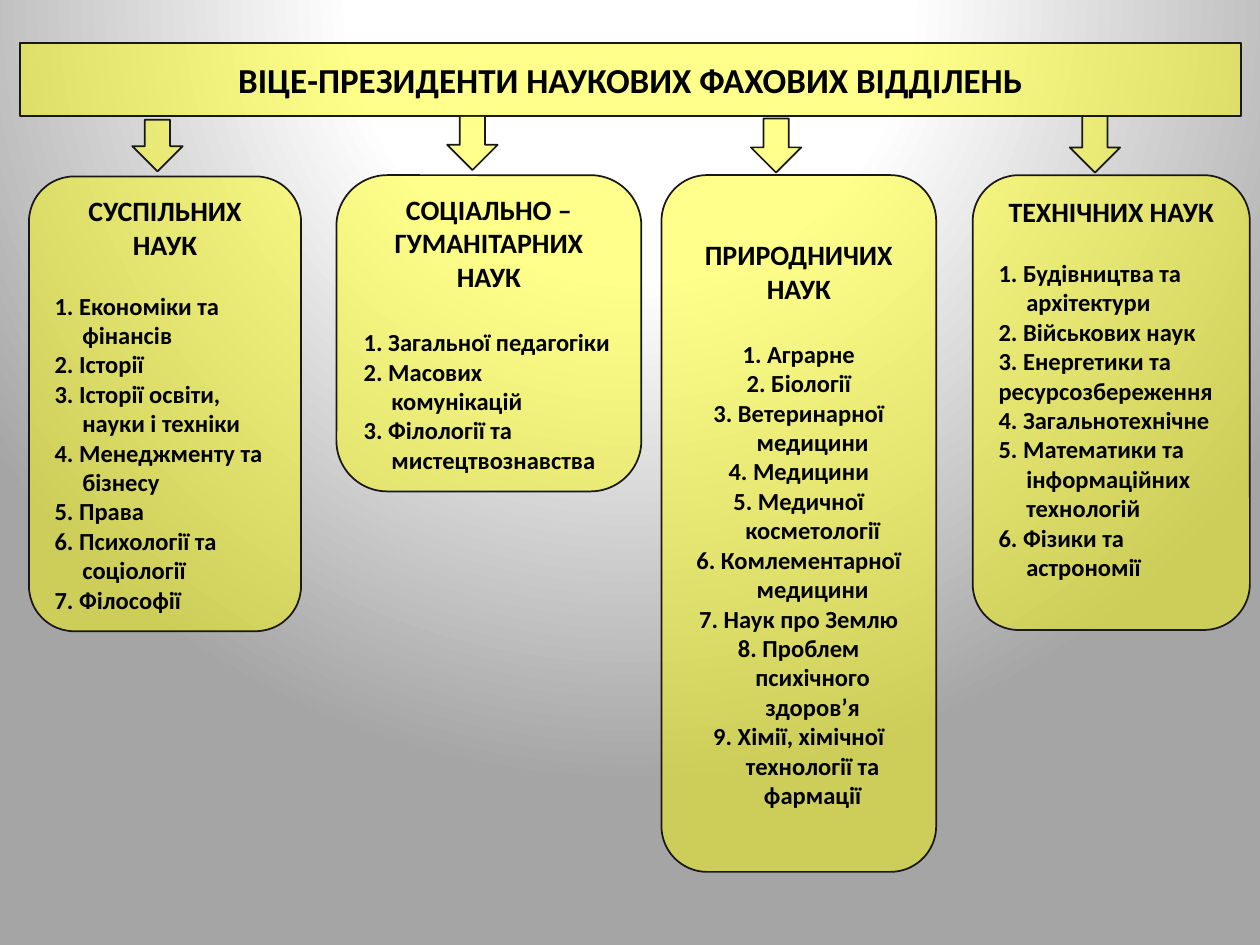
from pptx import Presentation
from pptx.dml.color import RGBColor
from pptx.enum import shapes as sh, text as tx
from pptx.oxml import parse_xml
from pptx.oxml.ns import nsdecls, qn
from pptx.util import Inches, Pt

YELLOW = RGBColor(0xFF, 0xFF, 0x00)
EDGE = RGBColor(0x18, 0x18, 0x18)
BLACK = RGBColor(0x00, 0x00, 0x00)
FONT = "Calibri"
ALPHA = 45000
HANG = 0.22
LEFT, CENTER = tx.PP_ALIGN.LEFT, tx.PP_ALIGN.CENTER

# Content: a "\v" breaks a line inside one item
TITLE = "ВІЦЕ-ПРЕЗИДЕНТИ НАУКОВИХ ФАХОВИХ ВІДДІЛЕНЬ"
COLUMNS = [
    dict(head="СУСПІЛЬНИХ НАУК", box=(0.23, 1.4, 2.16, 3.61),
         arrow=(1.05, 0.95, 0.4, 0.41), align=LEFT, gap=17, foot=0.05,
         items=["Економіки та\vфінансів", "Історії",
                "Історії освіти,\vнауки і техніки",
                "Менеджменту та\vбізнесу", "Права",
                "Психології та\vсоціології", "Філософії"]),
    dict(head="СОЦІАЛЬНО – ГУМАНІТАРНИХ НАУК", box=(2.67, 1.39, 2.42, 2.51),
         arrow=(3.55, 0.92, 0.4, 0.43), align=LEFT, gap=19.5, foot=0.05,
         items=["Загальної педагогіки", "Масових\vкомунікацій",
                "Філології та\vмистецтвознавства"]),
    dict(head="ПРИРОДНИЧИХ НАУК", box=(5.25, 1.39, 2.18, 5.53),
         arrow=(5.96, 0.94, 0.4, 0.43), align=CENTER, gap=19.5, foot=0.05,
         items=["Аграрне", "Біології", "Ветеринарної\vмедицини", "Медицини",
                "Медичної\vкосметології", "Комлементарної\vмедицини",
                "Наук про Землю", "Проблем\vпсихічного\vздоров’я",
                "Хімії, хімічної\vтехнології та\vфармації"]),
    dict(head="ТЕХНІЧНИХ НАУК", box=(7.72, 1.39, 2.2, 3.61),
         arrow=(8.49, 0.92, 0.4, 0.45), align=LEFT, gap=17, foot=0.28,
         flush=3,  # this item wraps without a hanging indent
         items=["Будівництва та\vархітектури", "Військових наук",
                "Енергетики та ресурсозбереження", "Загальнотехнічне",
                "Математики та\vінформаційних\vтехнологій",
                "Фізики та\vастрономії"]),
]


def paint(shape):
    """Translucent yellow with a thin dark edge."""
    shape.fill.solid()
    shape.fill.fore_color.rgb = YELLOW
    color = shape.element.spPr.find(qn("a:solidFill"))[0]
    color.append(parse_xml(f'<a:alpha {nsdecls("a")} val="{ALPHA}"/>'))
    shape.line.color.rgb = EDGE
    shape.line.width = Pt(1)


def add_shape(slide, kind, box):
    shape = slide.shapes.add_shape(kind, *map(Inches, box))
    shape.shadow.inherit = False
    paint(shape)
    return shape


def write(para, words, size, align):
    para.text = words
    para.alignment = align
    font = para.font
    font.name, font.size, font.bold = FONT, Pt(size), True
    font.color.rgb = BLACK


def hang(para):
    props = para._p.get_or_add_pPr()
    props.set("marL", str(Inches(HANG)))
    props.set("indent", str(-Inches(HANG)))


def add_title(slide):
    title = slide.shapes.title
    title.left, title.top, title.width, title.height = map(
        Inches, (0.16, 0.34, 9.69, 0.58))
    title.element.spPr.insert(1, parse_xml(
        f'<a:prstGeom {nsdecls("a")} prst="roundRect"><a:avLst/></a:prstGeom>'))
    paint(title)
    frame = title.text_frame
    frame.vertical_anchor = tx.MSO_ANCHOR.MIDDLE
    frame.auto_size = tx.MSO_AUTO_SIZE.NONE
    write(frame.paragraphs[0], TITLE, 20, CENTER)


def add_column(slide, col):
    card = add_shape(slide, sh.MSO_SHAPE.ROUNDED_RECTANGLE, col["box"])
    frame = card.text_frame
    frame.word_wrap = True
    frame.vertical_anchor = tx.MSO_ANCHOR.MIDDLE
    frame.margin_bottom = Inches(col["foot"])
    write(frame.paragraphs[0], col["head"], 16, CENTER)
    for num, item in enumerate(col["items"], 1):
        para = frame.add_paragraph()
        write(para, f"{num}. {item}", 14, col["align"])
        if num == 1:
            para.space_before = Pt(col["gap"])
        if num != col.get("flush"):
            hang(para)
    add_shape(slide, sh.MSO_SHAPE.DOWN_ARROW, col["arrow"])


def set_backdrop(slide):
    """Round white-to-grey gradient centred near the top."""
    slide.background.fill.solid()
    props = slide.element.find(".//" + qn("p:bgPr"))
    stops = "".join(
        f'<a:gs pos="{pos}"><a:srgbClr val="{rgb}"/></a:gs>'
        for pos, rgb in [(0, "FFFFFF"), (35000, "FFFFFF"), (100000, "A5A5A5")])
    props.replace(props[0], parse_xml(
        f'<a:gradFill {nsdecls("a")} rotWithShape="1"><a:gsLst>{stops}</a:gsLst>'
        '<a:path path="circle"><a:fillToRect l="50000" t="-80000" '
        'r="50000" b="180000"/></a:path></a:gradFill>'))


def main():
    prs = Presentation()
    prs.slide_width, prs.slide_height = Inches(10), Inches(7.5)
    slide = prs.slides.add_slide(prs.slide_layouts[5])
    set_backdrop(slide)
    add_title(slide)
    for col in COLUMNS:
        add_column(slide, col)
    prs.save("out.pptx")


if __name__ == "__main__":
    main()
